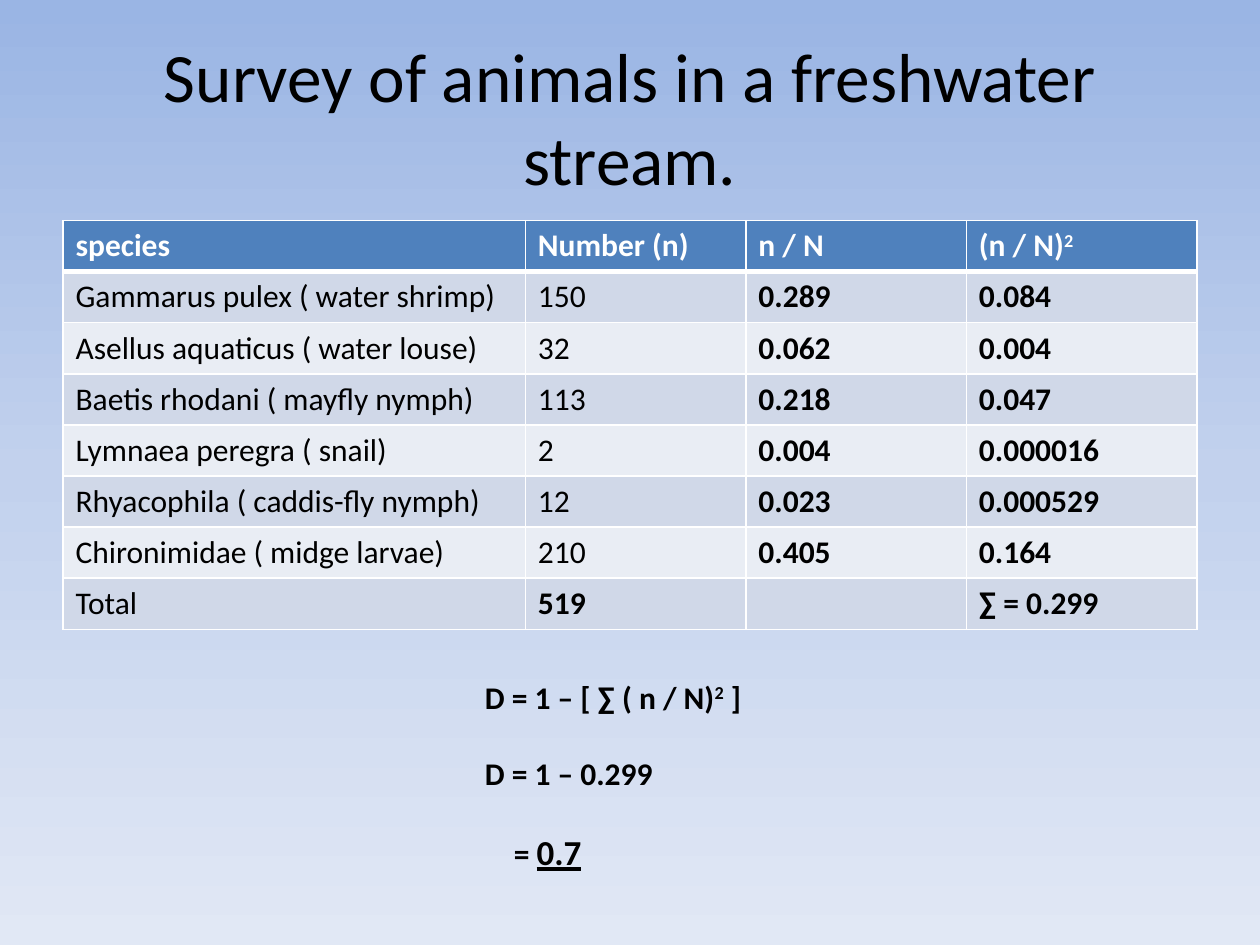
from copy import deepcopy

from lxml.etree import SubElement
from pptx import Presentation
from pptx.dml.color import RGBColor
from pptx.enum.text import MSO_ANCHOR, MSO_AUTO_SIZE, PP_ALIGN
from pptx.oxml.ns import qn
from pptx.util import Inches, Pt

TITLE = "Survey of animals in a freshwater stream."
HEADINGS = ("species", "Number (n)", "n / N", "(n / N)^2^")
SURVEY = [
    ("Gammarus pulex ( water shrimp)", "150", "0.289", "0.084"),
    ("Asellus aquaticus ( water louse)", "32", "0.062", "0.004"),
    ("Baetis rhodani ( mayfly nymph)", "113", "0.218", "0.047"),
    ("Lymnaea peregra ( snail)", "2", "0.004", "0.000016"),
    ("Rhyacophila ( caddis-fly nymph)", "12", "0.023", "0.000529"),
    ("Chironimidae ( midge larvae)", "210", "0.405", "0.164"),
]
TOTALS = ("Total", "519", "", "∑ = 0.299")
FORMULAS = ("D = 1 – [ ∑ ( n / N)^2^ ]", "D = 1 – 0.299")
RESULT = ("= ", "0.7")
COLUMN_WIDTHS = (3.67, 1.75, 1.75, 1.83)
ROW_HEIGHT = 0.405
SKY = ((0, "9AB5E4"), (0.5, "C2D1ED"), (1, "E1E8F5"))
HEADER_FILL, BAND_FILLS = "4F81BD", ("D0D8E8", "E9EDF4")
BLACK, WHITE = "000000", "FFFFFF"


def color(value):
    """Turn a hex string into a colour."""
    return RGBColor.from_string(value)


def style(font, hue=BLACK, **values):
    """Apply the slide's font, a colour and further format values."""
    for key, value in {"name": "Calibri", "size": Pt(18), **values}.items():
        setattr(font, key, value)
    font.color.rgb = color(hue)


def write(paragraph, text, **values):
    """Add text whose parts between carets are superscript."""
    for index, part in enumerate(text.split("^")):
        if part:
            run = paragraph.add_run()
            run.text = part
            style(run.font, **values)
            if index % 2:
                run.font._element.set("baseline", "30000")


def add_border(cell, side, points):
    """Draw one white side of a cell."""
    line = SubElement(cell._tc.get_or_add_tcPr(), qn(f"a:ln{side}"), w=str(Pt(points)))
    SubElement(SubElement(line, qn("a:solidFill")), qn("a:srgbClr"), val=WHITE)


def paint_background(slide):
    """Fill the background from top to bottom with the sky colours."""
    fill = slide.background.fill
    fill.gradient()
    fill.gradient_angle = 270
    stop_list = next(slide._element.iter(qn("a:gsLst")))
    stop_list.append(deepcopy(stop_list[0]))
    for stop, (position, hue) in zip(fill.gradient_stops, SKY):
        stop.position = position
        stop.color.rgb = color(hue)


def place_title(slide):
    """Fill and position the title placeholder."""
    title = slide.shapes.title
    title.left, title.top, title.width, title.height = map(Inches, (0.5, 0.3, 9, 1.25))
    frame = title.text_frame
    frame.auto_size, frame.vertical_anchor = MSO_AUTO_SIZE.NONE, MSO_ANCHOR.MIDDLE
    frame.paragraphs[0].alignment = PP_ALIGN.CENTER
    write(frame.paragraphs[0], TITLE, size=Pt(39.6))


def add_survey(slide):
    """Add the table of species counts."""
    rows = [HEADINGS, *SURVEY, TOTALS]
    table = slide.shapes.add_table(
        len(rows), len(HEADINGS), Inches(0.5), Inches(1.75),
        Inches(sum(COLUMN_WIDTHS)), Inches(ROW_HEIGHT * len(rows))).table
    for column, width in zip(table.columns, COLUMN_WIDTHS):
        column.width = Inches(width)
    for row_index, row in enumerate(rows):
        header = row is HEADINGS
        for column_index, text in enumerate(row):
            cell = table.cell(row_index, column_index)
            for side in "LRTB":
                under_header = (side == "B" and header) or (side == "T" and row_index == 1)
                add_border(cell, side, 3 if under_header else 1)
            cell.fill.solid()
            cell.fill.fore_color.rgb = color(HEADER_FILL if header else BAND_FILLS[(row_index - 1) % 2])
            bold = header or column_index > 1 or (row is TOTALS and column_index == 1)
            write(cell.text_frame.paragraphs[0], text, hue=WHITE if header else BLACK, bold=bold)


def add_calculation(slide):
    """Add the worked diversity index under the table."""
    frame = slide.shapes.add_textbox(*map(Inches, (3.75, 5.33, 3.67, 1.95))).text_frame
    frame.word_wrap = True
    for index, formula in enumerate(FORMULAS):
        paragraph = frame.add_paragraph() if index else frame.paragraphs[0]
        paragraph.space_before = Pt(22 if index else 0)
        write(paragraph, formula, bold=True)
    answer = frame.add_paragraph()
    answer.space_before = Pt(22)
    answer._p.get_or_add_pPr().set("marL", str(Inches(0.23)))
    label, value = RESULT
    write(answer, label, bold=True)
    write(answer, value, bold=True, size=Pt(20), underline=True)


def main():
    """Build and save the slide."""
    presentation = Presentation()
    presentation.slide_width, presentation.slide_height = Inches(10), Inches(7.5)
    slide = presentation.slides.add_slide(presentation.slide_layouts[5])
    paint_background(slide)
    place_title(slide)
    add_survey(slide)
    add_calculation(slide)
    presentation.save("out.pptx")


if __name__ == "__main__":
    main()
